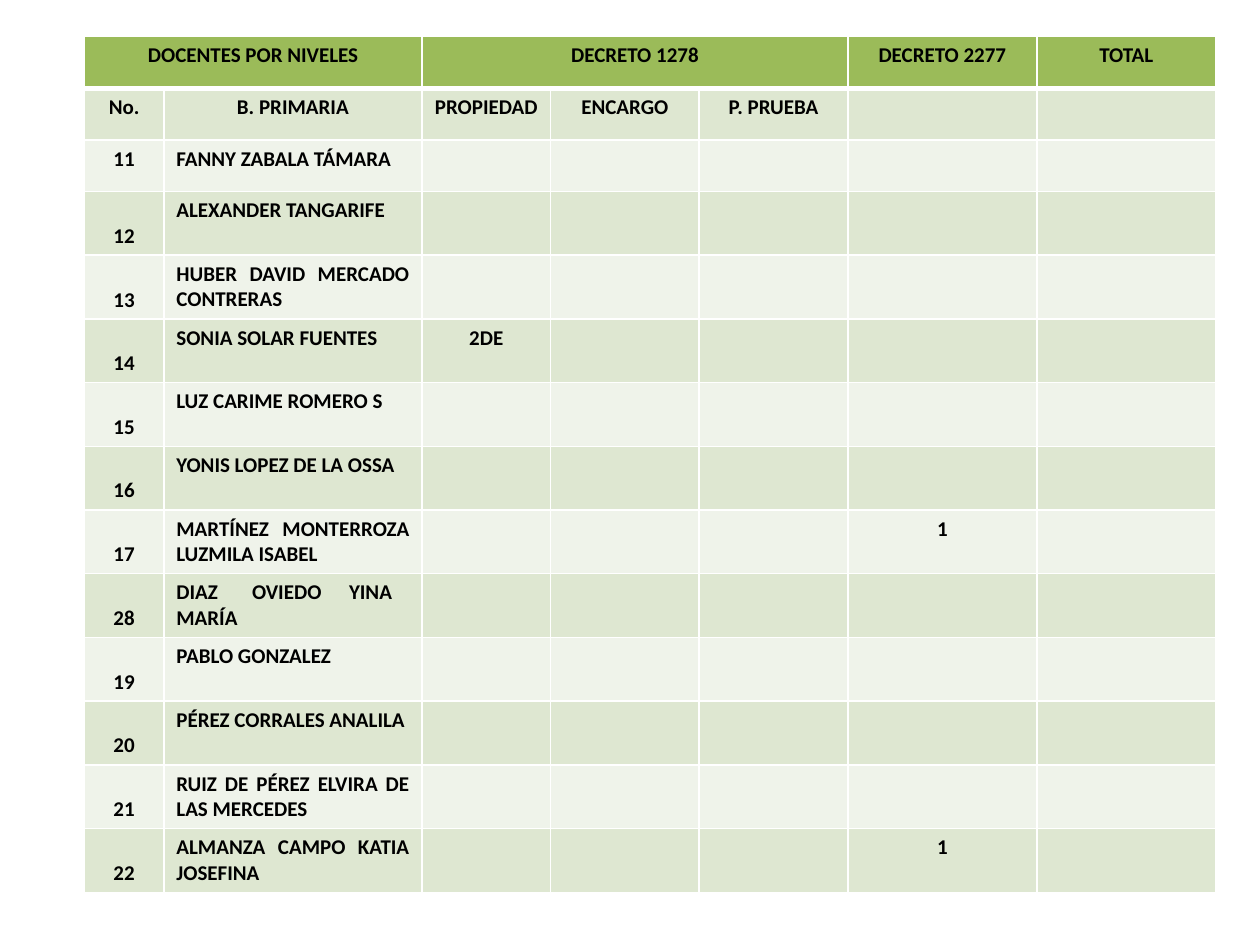
from typing import NamedTuple

from lxml.etree import SubElement
from pptx import Presentation
from pptx.dml.color import RGBColor
from pptx.enum.text import MSO_ANCHOR, PP_ALIGN
from pptx.oxml.ns import qn
from pptx.util import Inches, Pt

COLORS = {"header": "9BBB59", "dark": "DEE7D1", "light": "EFF3EA",
          "border": "FFFFFF", "text": "000000"}
FONT = "Calibri"
COLUMN_WIDTHS = [0.63, 2.05, 1.02, 1.18, 1.18, 1.5, 1.42]
TABLE_HEIGHT = 6.79
HEADING_HEIGHT = 0.41
SHORT_ROWS = 3


class Teacher(NamedTuple):
    number: str
    name: str
    property_post: str = ""
    decree_2277: str = ""
    tab_stops: tuple[float, ...] = ()


class HeaderGroup(NamedTuple):
    text: str
    first: int
    last: int


HEADER_GROUPS = [
    HeaderGroup("DOCENTES POR NIVELES", 0, 1),
    HeaderGroup("DECRETO 1278", 2, 4),
    HeaderGroup("DECRETO 2277", 5, 5),
    HeaderGroup("TOTAL", 6, 6),
]
SUBHEADINGS = ["No.", "B. PRIMARIA", "PROPIEDAD", "ENCARGO", "P. PRUEBA"]
TEACHERS = [
    Teacher("11", "FANNY ZABALA TÁMARA"),
    Teacher("12", "ALEXANDER TANGARIFE"),
    Teacher("13", "HUBER DAVID MERCADO CONTRERAS"),
    Teacher("14", "SONIA SOLAR FUENTES", property_post="2DE"),
    Teacher("15", "LUZ CARIME ROMERO S"),
    Teacher("16", "YONIS LOPEZ DE LA OSSA"),
    Teacher("17", "MARTÍNEZ MONTERROZA LUZMILA ISABEL", decree_2277="1"),
    Teacher("28", "DIAZ\tOVIEDO\tYINA MARÍA", tab_stops=(0.6, 1.37)),
    Teacher("19", "PABLO GONZALEZ"),
    Teacher("20", "PÉREZ CORRALES ANALILA"),
    Teacher("21", "RUIZ DE PÉREZ ELVIRA DE LAS MERCEDES"),
    Teacher("22", "ALMANZA CAMPO KATIA JOSEFINA", decree_2277="1"),
]


def style_cell(cell, fill: str, bottom_width: float = 1) -> None:
    """Give a cell its fill and its four white borders."""
    properties = cell._tc.get_or_add_tcPr()
    for side, width in (("L", 1), ("R", 1), ("T", 1), ("B", bottom_width)):
        line = SubElement(properties, qn(f"a:ln{side}"), w=str(Pt(width)))
        solid = SubElement(line, qn("a:solidFill"))
        SubElement(solid, qn("a:srgbClr"), val=COLORS["border"])
    cell.fill.solid()
    cell.fill.fore_color.rgb = RGBColor.from_string(COLORS[fill])


def write_cell(cell, text: str, *, align=PP_ALIGN.CENTER, anchor=MSO_ANCHOR.TOP,
               tab_stops: tuple[float, ...] = ()) -> None:
    if not text:
        return
    cell.vertical_anchor = anchor
    para = cell.text_frame.paragraphs[0]
    para.alignment = align
    if tab_stops:
        stops = SubElement(para._p.get_or_add_pPr(), qn("a:tabLst"))
        for stop in tab_stops:
            SubElement(stops, qn("a:tab"), pos=str(Inches(stop)), algn="l")
    span = para.add_run()
    span.text = text
    span.font.name = FONT
    span.font.size = Pt(12)
    span.font.bold = True
    span.font.color.rgb = RGBColor.from_string(COLORS["text"])


def size_table(table) -> None:
    for column, width in zip(table.columns, COLUMN_WIDTHS):
        column.width = Inches(width)
    tall_rows = len(table.rows) - SHORT_ROWS
    tall_height = (TABLE_HEIGHT - SHORT_ROWS * HEADING_HEIGHT) / tall_rows
    for index, row in enumerate(table.rows):
        row.height = Inches(HEADING_HEIGHT if index < SHORT_ROWS else tall_height)


def fill_table(table) -> None:
    for index, row in enumerate(table.rows):
        for cell in row.cells:
            if index == 0:
                style_cell(cell, "header", bottom_width=3)
            else:
                style_cell(cell, "dark" if index % 2 else "light")

    for group in HEADER_GROUPS:
        cell = table.cell(0, group.first)
        if group.last > group.first:
            cell.merge(table.cell(0, group.last))
        write_cell(cell, group.text)
    for column, text in enumerate(SUBHEADINGS):
        write_cell(table.cell(1, column), text)

    for row, teacher in enumerate(TEACHERS, start=2):
        anchor = MSO_ANCHOR.TOP if row < SHORT_ROWS else MSO_ANCHOR.BOTTOM
        write_cell(table.cell(row, 0), teacher.number, anchor=anchor)
        write_cell(table.cell(row, 1), teacher.name, align=PP_ALIGN.JUSTIFY,
                   tab_stops=teacher.tab_stops)
        write_cell(table.cell(row, 2), teacher.property_post)
        write_cell(table.cell(row, 5), teacher.decree_2277)


def main() -> None:
    deck = Presentation()
    deck.slide_width, deck.slide_height = Inches(10), Inches(7.5)
    page = deck.slides.add_slide(deck.slide_layouts[6])
    frame = page.shapes.add_table(
        len(TEACHERS) + 2, len(COLUMN_WIDTHS), Inches(0.67), Inches(0.29),
        Inches(sum(COLUMN_WIDTHS)), Inches(TABLE_HEIGHT))
    size_table(frame.table)
    fill_table(frame.table)
    deck.save("out.pptx")


if __name__ == "__main__":
    main()
